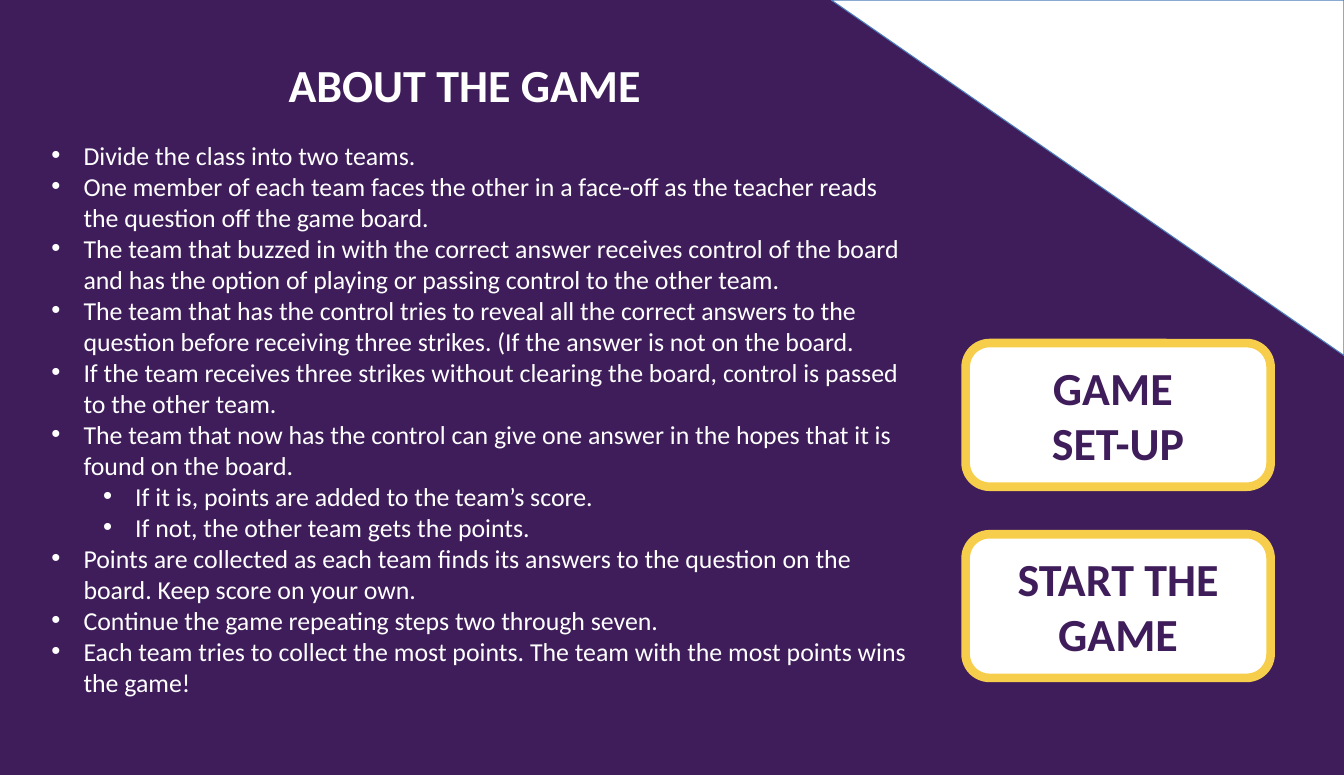
"""Build the game rules slide with its two buttons."""
import lxml.etree
import pptx
import pptx.dml.color
import pptx.enum.shapes
import pptx.enum.text
import pptx.oxml.ns
import pptx.util

PX = 9144
FONT = "Calibri"
PURPLE = pptx.dml.color.RGBColor(0x3F, 0x1D, 0x5A)
WHITE = pptx.dml.color.RGBColor(0xFF, 0xFF, 0xFF)
YELLOW = pptx.dml.color.RGBColor(0xF7, 0xCE, 0x4C)
BLUE = pptx.dml.color.RGBColor(0x4B, 0x7E, 0xBC)
SHAPES = pptx.enum.shapes.MSO_SHAPE
CENTER = pptx.enum.text.PP_ALIGN.CENTER
MIDDLE = pptx.enum.text.MSO_ANCHOR.MIDDLE

BULLET_HANG = 31
LEVEL_STEP = 50
RULES = [
    (0, "Divide the class into two teams."),
    (0, "One member of each team faces the other in a face-off as the teacher reads "
        "the question off the game board."),
    (0, "The team that buzzed in with the correct answer receives control of the board "
        "and has the option of playing or passing control to the other team."),
    (0, "The team that has the control tries to reveal all the correct answers to the "
        "question before receiving three strikes. (If the answer is not on the board."),
    (0, "If the team receives three strikes without clearing the board, control is passed "
        "to the other team."),
    (0, "The team that now has the control can give one answer in the hopes that it "
        "is found on the board."),
    (1, "If it is, points are added to the team’s score."),
    (1, "If not, the other team gets the points."),
    (0, "Points are collected as each team finds its answers to the question on the "
        "board. Keep score on your own."),
    (0, "Continue the game repeating steps two through seven."),
    (0, "Each team tries to collect the most points. The team with the most points "
        "wins the game!"),
]
BUTTON_LEFT, BUTTON_TOP, BUTTON_STEP = 934, 332, 185
BUTTONS = [["GAME ", "SET-UP"], ["START THE GAME"]]


def scale(*lengths):
    """Turn px lengths into EMU."""
    return [pptx.util.Emu(length * PX) for length in lengths]


def write(para, text, size=18, color=WHITE, bold=False, align=None):
    """Write formatted text into a paragraph."""
    para.alignment = align
    span = para.add_run()
    span.text = text
    span.font.name = FONT
    span.font.size = pptx.util.Pt(size)
    span.font.bold = bold
    span.font.color.rgb = color


def write_lines(frame, lines, **style):
    """Write one paragraph per line and return the paragraphs."""
    frame.word_wrap = True
    paras = []
    for index, line in enumerate(lines):
        para = frame.add_paragraph() if index else frame.paragraphs[0]
        write(para, line, **style)
        paras.append(para)
    return paras


def add_text(page, place, lines, **style):
    """Add a text box and return its paragraphs."""
    box = page.shapes.add_textbox(*scale(*place))
    return write_lines(box.text_frame, lines, **style)


def set_bullet(para, level):
    """Give a paragraph a round bullet with a hanging indent."""
    para.level = level
    properties = para._p.get_or_add_pPr()
    margin, indent = scale(BULLET_HANG + LEVEL_STEP * level, -BULLET_HANG)
    properties.set("marL", str(margin))
    properties.set("indent", str(indent))
    font = lxml.etree.SubElement(properties, pptx.oxml.ns.qn("a:buFont"))
    font.set("typeface", "Arial")
    bullet = lxml.etree.SubElement(properties, pptx.oxml.ns.qn("a:buChar"))
    bullet.set("char", "•")


def add_shape(page, kind, place, line, width):
    """Add a white preset shape with an outline."""
    shape = page.shapes.add_shape(kind, *scale(*place))
    shape.shadow.inherit = False
    shape.fill.solid()
    shape.fill.fore_color.rgb = WHITE
    shape.line.color.rgb = line
    shape.line.width = pptx.util.Pt(width)
    return shape


def add_button(page, top, lines):
    """Add a rounded button with a centred label."""
    place = (BUTTON_LEFT, top, 295, 139)
    button = add_shape(page, SHAPES.ROUNDED_RECTANGLE, place, YELLOW, 6)
    button.text_frame.vertical_anchor = MIDDLE
    write_lines(button.text_frame, lines, size=32, color=PURPLE, bold=True, align=CENTER)


def main():
    """Build and save the deck."""
    deck = pptx.Presentation()
    deck.slide_width, deck.slide_height = scale(1300, 750)
    page = deck.slides.add_slide(deck.slide_layouts[6])
    page.background.fill.solid()
    page.background.fill.fore_color.rgb = PURPLE

    corner = add_shape(page, SHAPES.RIGHT_TRIANGLE, (804, 0, 496, 344), BLUE, 0.75)
    corner.rotation = 180
    paras = add_text(page, (40, 130, 847, 555), [text for _, text in RULES])
    for para, (level, _) in zip(paras, RULES):
        set_bullet(para, level)
    add_text(page, (225, 50, 449, 64), ["ABOUT THE GAME"], size=32, bold=True, align=CENTER)
    for index, lines in enumerate(BUTTONS):
        add_button(page, BUTTON_TOP + index * BUTTON_STEP, lines)
    deck.save("out.pptx")


if __name__ == "__main__":
    main()
